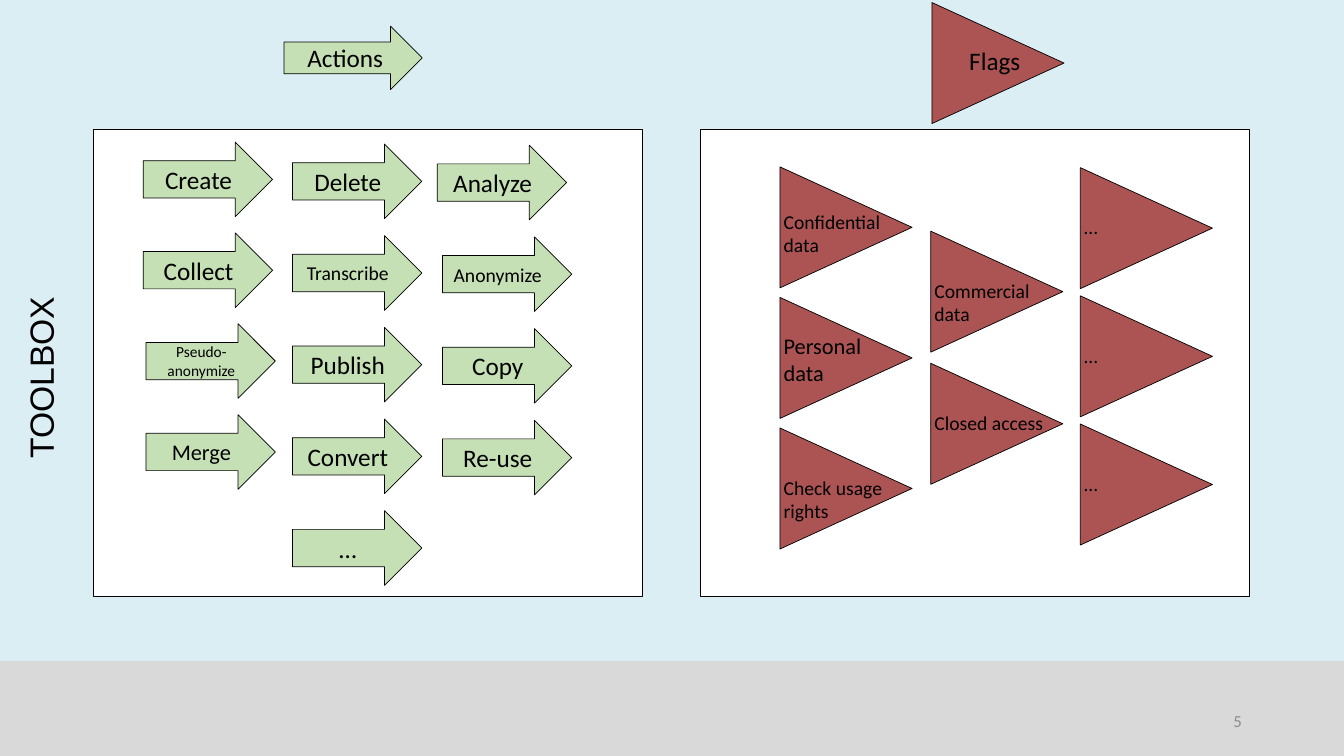
from pptx import Presentation
from pptx.dml.color import RGBColor
from pptx.enum.shapes import MSO_SHAPE as Shape
from pptx.enum.text import MSO_ANCHOR as Anchor, MSO_AUTO_SIZE as AutoSize, PP_ALIGN as Align
from pptx.util import Cm, Pt

GREEN, RED, WHITE, GREY, SKY = "C5E0B4", "AC5454", "FFFFFF", "D9D9D9", "DBEEF4"
PANEL_SIZE = (13.84, 11.79)
FLAG_WIDTH, FLAG_HEIGHT = 3.33, 3.05

# Each column: first top, row step, then (label, font size, left) within the panel
ACTION_COLUMNS = [
    (0.33, 2.29, [("Create", 18, 1.25), ("Collect", 18, 1.25),
                  ("Pseudo-anonymize", 11, 1.32), ("Merge", 16, 1.32)]),
    (0.38, 2.31, [("Delete", 18, 5.01), ("Transcribe", 14, 5.01), ("Publish", 18, 5.01),
                  ("Convert", 18, 5.01), ("…", 18, 5.01)]),
    (0.41, 2.31, [("Analyze", 18, 8.66), ("Anonymize", 14, 8.79),
                  ("Copy", 18, 8.79), ("Re-use", 18, 8.79)]),
]

# Each column: centre x, first centre y, row step, then (label, font size, label top from centre)
FLAG_COLUMNS = [
    (3.67, 2.48, 3.29, [("Confidential data", 14, -0.57), ("Personal data", 16, -0.77),
                        ("Check usage rights", 14, -0.45)]),
    (7.47, 4.1, 3.33, [("Commercial\ndata", 14, -0.45), ("Closed access", 14, -0.45)]),
    (11.24, 2.5, 3.23, [("…", 14, -0.45)] * 3),
]


def color(hex_code):
    return RGBColor.from_string(hex_code)


def write(frame, text, size=18, font="Calibri", ink="000000", align=Align.LEFT,
          anchor=Anchor.TOP, spacing=None):
    frame.word_wrap = True
    frame.auto_size = AutoSize.NONE
    frame.vertical_anchor = anchor
    frame.text = text
    for paragraph in frame.paragraphs:
        paragraph.alignment = align
        if spacing:
            paragraph.line_spacing = spacing
        paragraph.font.size = Pt(size)
        paragraph.font.name = font
        paragraph.font.color.rgb = color(ink)


def add_figure(slide, kind, left, top, width, height, fill, outlined=True):
    figure = slide.shapes.add_shape(kind, Cm(left), Cm(top), Cm(width), Cm(height))
    figure.shadow.inherit = False
    figure.fill.solid()
    figure.fill.fore_color.rgb = color(fill)
    if outlined:
        figure.line.color.rgb = color("000000")
        figure.line.width = Pt(0.5)
    else:
        figure.line.fill.background()
    return figure


def add_label(slide, text, left, top, width, height, **text_format):
    label = slide.shapes.add_textbox(Cm(left), Cm(top), Cm(width), Cm(height))
    write(label.text_frame, text, **text_format)


def add_action(slide, text, size, left, top, width=3.26, height=1.88):
    arrow = add_figure(slide, Shape.RIGHT_ARROW, left, top, width, height, GREEN)
    write(arrow.text_frame, text, size=size, align=Align.CENTER, anchor=Anchor.MIDDLE)


def add_flag(slide, text, size, center_x, center_y, label_top, align=Align.LEFT):
    # The upright triangle is turned about its centre to point right
    triangle = add_figure(slide, Shape.ISOSCELES_TRIANGLE, center_x - FLAG_HEIGHT / 2,
                          center_y - FLAG_WIDTH / 2, FLAG_HEIGHT, FLAG_WIDTH, RED)
    triangle.rotation = 90
    add_label(slide, text, center_x - 1.82, center_y + label_top, 3.48, 1.45,
              size=size, align=align)


def add_actions_panel(slide, left, top):
    add_figure(slide, Shape.RECTANGLE, left, top, *PANEL_SIZE, WHITE)
    add_action(slide, "Actions", 18, left + 4.8, top - 2.59, 3.48, 1.6)
    for first_top, step, actions in ACTION_COLUMNS:
        for row, (text, size, offset) in enumerate(actions):
            add_action(slide, text, size, left + offset, top + first_top + row * step)


def add_flags_panel(slide, left, top):
    add_figure(slide, Shape.RECTANGLE, left, top, *PANEL_SIZE, WHITE)
    add_flag(slide, "Flags", 18, left + 7.5, top - 1.66, -0.57, align=Align.CENTER)
    for center_x, first_y, step, flags in FLAG_COLUMNS:
        for row, (text, size, label_top) in enumerate(flags):
            add_flag(slide, text, size, left + center_x, top + first_y + row * step, label_top)


def add_side_title(slide, left, top, width, height):
    title = slide.shapes.title
    title.left, title.top, title.width, title.height = Cm(left), Cm(top), Cm(width), Cm(height)
    title.rotation = 270
    write(title.text_frame, "TOOLBOX", size=24, font="Arial", align=Align.CENTER,
          anchor=Anchor.MIDDLE, spacing=0.8)


def add_footer(slide, top, width, height):
    add_figure(slide, Shape.RECTANGLE, 0, top, width, height, GREY, outlined=False)
    add_label(slide, "5", width - 9.94, top + 0.99, 7.62, 1.02, size=12, ink="8C8C8C",
              align=Align.RIGHT, anchor=Anchor.MIDDLE)


def main():
    deck = Presentation()
    deck.slide_width, deck.slide_height = Cm(33.87), Cm(19.05)
    slide = deck.slides.add_slide(deck.slide_layouts[5])
    slide.background.fill.solid()
    slide.background.fill.fore_color.rgb = color(SKY)

    add_side_title(slide, -4.6, 8.97, 11.43, 1.09)
    add_footer(slide, 16.66, 33.87, 2.39)
    add_actions_panel(slide, 2.36, 3.25)
    add_flags_panel(slide, 17.65, 3.25)

    deck.save("out.pptx")


if __name__ == "__main__":
    main()
